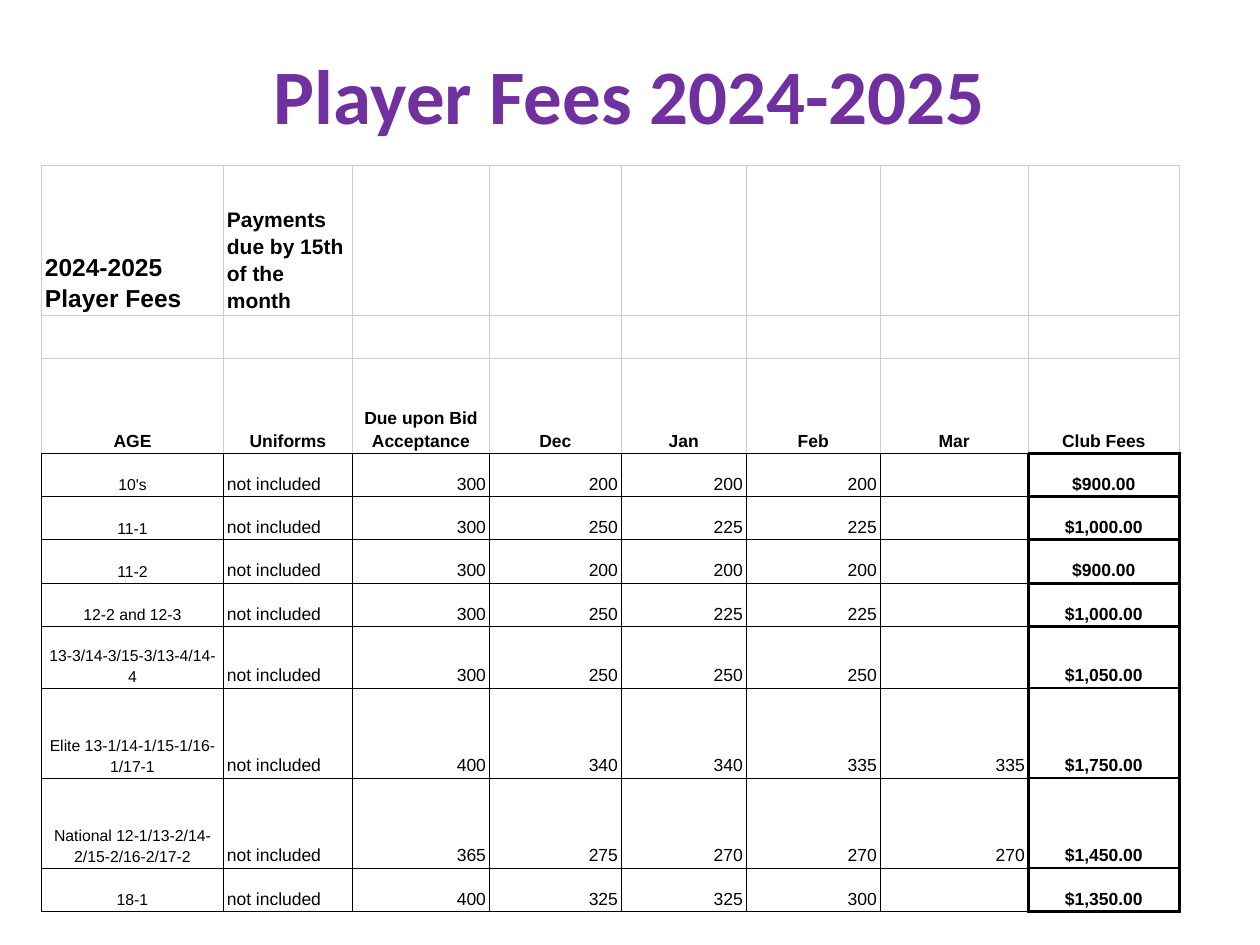
import lxml.etree
import pptx
import pptx.dml.color
import pptx.enum.text
import pptx.oxml.ns
import pptx.util

Pt = pptx.util.Pt
ALIGN = pptx.enum.text.PP_ALIGN
ANCHOR = pptx.enum.text.MSO_ANCHOR

TITLE = "Player Fees 2024-2025"
BANNER = ["2024-2025 Player Fees", "Payments due by 15th of the month"]
HEADINGS = ["AGE", "Uniforms", "Due upon Bid Acceptance", "Dec", "Jan", "Feb", "Mar", "Club Fees"]
FEES = [
    ("10's", (300, 200, 200, 200, ""), "$900.00"),
    ("11-1", (300, 250, 225, 225, ""), "$1,000.00"),
    ("11-2", (300, 200, 200, 200, ""), "$900.00"),
    ("12-2 and 12-3", (300, 250, 225, 225, ""), "$1,000.00"),
    ("13-3/14-3/15-3/13-4/14-4", (300, 250, 250, 250, ""), "$1,050.00"),
    ("Elite 13-1/14-1/15-1/16-1/17-1", (400, 340, 340, 335, 335), "$1,750.00"),
    ("National 12-1/13-2/14-2/15-2/16-2/17-2", (365, 275, 270, 270, 270), "$1,450.00"),
    ("18-1", (400, 325, 325, 300, ""), "$1,350.00"),
]
UNIFORMS = "not included"
COLUMN_WIDTHS = [104, 73.7, 78.3, 75.4, 71.4, 76.6, 84.6, 86.3]
ROW_HEIGHTS = [85.75, 24.5, 54.25, 24.75, 24.75, 24.75, 24.75, 35.25, 51.4, 51.4, 24.75]
TABLE_LEFT, TABLE_TOP = 23.7, 94.5
HEADING_ROW = 2

THEME = {
    "title_font": "Calibri", "table_font": "Arial",
    "title": "7030A0", "text": "000000", "grid": "CCCCCC", "rule": "000000",
    "title_size": 44, "banner_sizes": (14, 12), "body_size": 10, "age_size": 9,
    "thin": 0.6, "thick": 1.8,
}


def write_text(frame, text, *, size, font=THEME["table_font"], color=THEME["text"],
               bold=False, align=ALIGN.LEFT, spacing=1.15):
    frame.word_wrap = True
    paragraph = frame.paragraphs[0]
    paragraph.alignment = align
    paragraph.line_spacing = spacing
    if not text:
        paragraph._p.get_or_add_endParaRPr().set("sz", str(size * 100))
        return
    run = paragraph.add_run()
    run.text = text
    run.font.size = Pt(size)
    run.font.name = font
    run.font.bold = bold
    run.font.color.rgb = pptx.dml.color.RGBColor.from_string(color)


def set_border(cell, side, color, width):
    qualified = pptx.oxml.ns.qn
    properties = cell._tc.get_or_add_tcPr()
    line = lxml.etree.SubElement(properties, qualified(f"a:ln{side}"), w=str(Pt(width)))
    fill = lxml.etree.SubElement(line, qualified("a:solidFill"))
    lxml.etree.SubElement(fill, qualified("a:srgbClr"), val=color)


def cell_borders(row, column):
    last = len(COLUMN_WIDTHS) - 1
    is_fee = row > HEADING_ROW
    color = THEME["rule"] if is_fee else THEME["grid"]
    width = THEME["thick"] if is_fee and column == last else THEME["thin"]
    borders = {side: (color, width) for side in "LRTB"}
    if row == HEADING_ROW:
        borders["B"] = (THEME["rule"], THEME["thick"] if column == last else THEME["thin"])
    if is_fee and column == last - 1:
        borders["R"] = (THEME["rule"], THEME["thick"])
    return borders


def cell_format(row, column):
    if row < HEADING_ROW:
        sizes = THEME["banner_sizes"]
        return {"size": sizes[min(column, len(sizes) - 1)], "bold": True}
    body = THEME["body_size"]
    if row == HEADING_ROW:
        return {"size": body, "bold": True, "align": ALIGN.CENTER}
    if column == 0:
        return {"size": THEME["age_size"], "align": ALIGN.CENTER}
    if column == 1:
        return {"size": body}
    if column == len(COLUMN_WIDTHS) - 1:
        return {"size": body, "bold": True, "align": ALIGN.CENTER}
    return {"size": body, "align": ALIGN.RIGHT}


def add_title(slide):
    frame = slide.shapes.add_textbox(Pt(54), Pt(12.25), Pt(612), Pt(82)).text_frame
    frame.vertical_anchor = ANCHOR.MIDDLE
    write_text(frame, TITLE, size=THEME["title_size"], font=THEME["title_font"],
               color=THEME["title"], bold=True, align=ALIGN.CENTER, spacing=1.0)


def add_fee_table(slide):
    column_count = len(COLUMN_WIDTHS)
    rows = [BANNER + [""] * (column_count - len(BANNER)), [""] * column_count, HEADINGS]
    rows += [[age, UNIFORMS, *map(str, payments), total] for age, payments, total in FEES]
    table = slide.shapes.add_table(
        len(rows), column_count, Pt(TABLE_LEFT), Pt(TABLE_TOP),
        Pt(sum(COLUMN_WIDTHS)), Pt(sum(ROW_HEIGHTS))).table
    table.first_row = table.horz_banding = False
    for column, width in zip(table.columns, COLUMN_WIDTHS):
        column.width = Pt(width)
    for row, height in zip(table.rows, ROW_HEIGHTS):
        row.height = Pt(height)
    for row, texts in enumerate(rows):
        for column, text in enumerate(texts):
            cell = table.cell(row, column)
            cell.margin_left = cell.margin_right = Pt(2)
            cell.margin_top = cell.margin_bottom = Pt(1.4)
            cell.vertical_anchor = ANCHOR.BOTTOM
            for side, (color, width) in cell_borders(row, column).items():
                set_border(cell, side, color, width)
            cell.fill.background()
            write_text(cell.text_frame, text, **cell_format(row, column))


def main():
    presentation = pptx.Presentation()
    presentation.slide_width, presentation.slide_height = Pt(720), Pt(540)
    slide = presentation.slides.add_slide(presentation.slide_layouts[6])
    add_title(slide)
    add_fee_table(slide)
    presentation.save("out.pptx")


if __name__ == "__main__":
    main()
